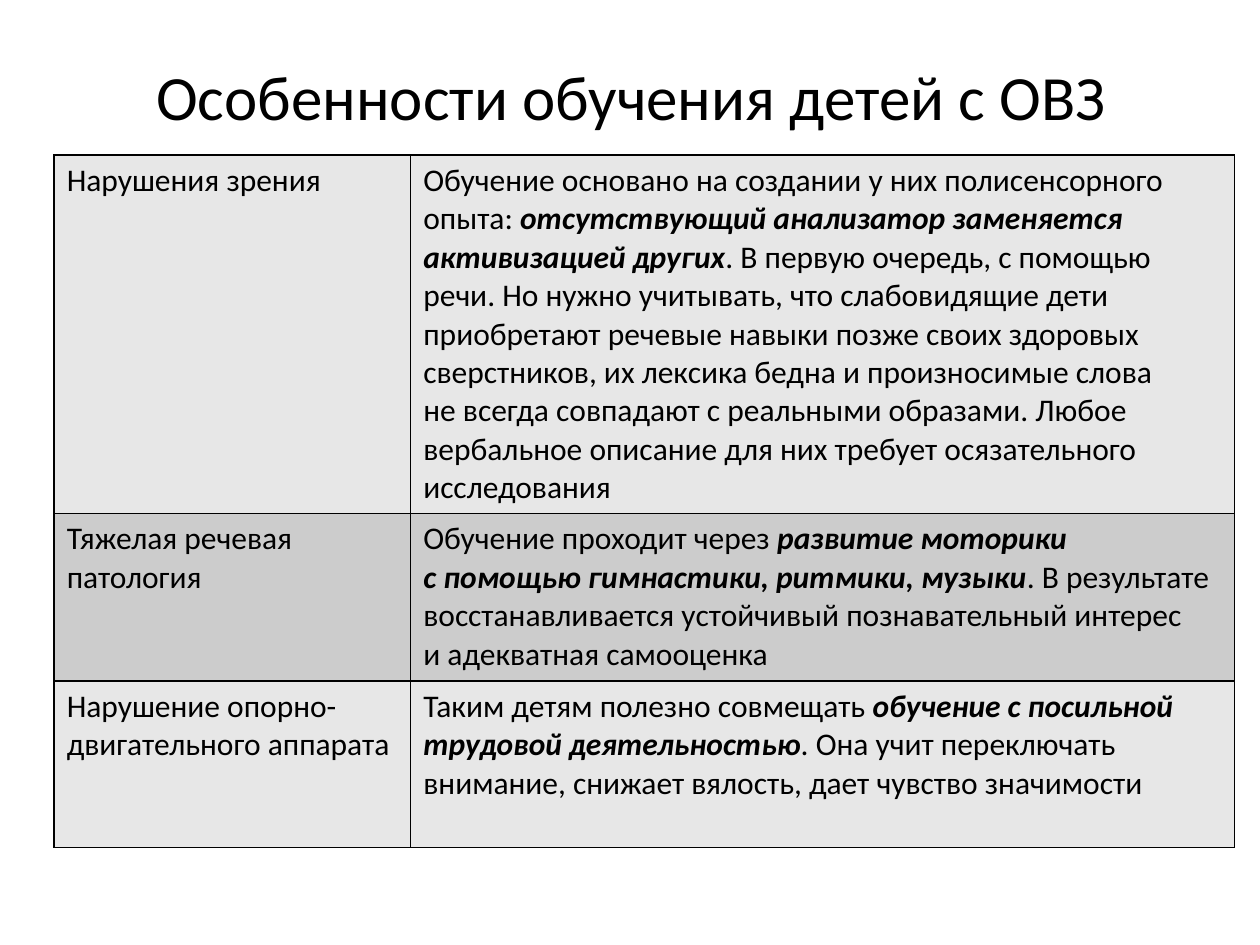
from lxml.etree import SubElement
from pptx import Presentation
from pptx.dml.color import RGBColor
from pptx.enum.text import MSO_ANCHOR, PP_ALIGN
from pptx.oxml.ns import qn
from pptx.util import Inches, Pt

TITLE = "Особенности обучения детей с ОВЗ"
# Each row: topic, then text before the key idea, the key idea, text after it
ROWS = [
    ("Нарушения зрения", (
        "Обучение основано на создании у них полисенсорного опыта: ",
        "отсутствующий анализатор заменяется активизацией других",
        ". В первую очередь, с помощью речи. Но нужно учитывать, что "
        "слабовидящие дети приобретают речевые навыки позже своих здоровых "
        "сверстников, их лексика бедна и произносимые слова не всегда "
        "совпадают с реальными образами. Любое вербальное описание для них "
        "требует осязательного исследования")),
    ("Тяжелая речевая патология", (
        "Обучение проходит через ",
        "развитие моторики с помощью гимнастики, ритмики, музыки",
        ". В результате восстанавливается устойчивый познавательный интерес "
        "и адекватная самооценка")),
    ("Нарушение опорно-двигательного аппарата", (
        "Таким детям полезно совмещать ",
        "обучение с посильной трудовой деятельностью",
        ". Она учит переключать внимание, снижает вялость, дает чувство "
        "значимости")),
]
COLUMN_WIDTHS = (2.83, 6.54)
ROW_HEIGHTS = (2.84, 1.33, 1.32)
BAND_FILLS = ("E7E7E7", "CCCCCC")
BLACK = "000000"
NO_BREAK_SPACE = chr(160)


def color(hex_value):
    return RGBColor.from_string(hex_value)


def bind_short_words(text):
    """Keep one- and two-letter words on the line of the word that follows."""
    return "".join(
        word + (NO_BREAK_SPACE if word.isalpha() and len(word) <= 2 else " ")
        for word in text.split(" "))[:-1]


def add_run(paragraph, text, size, **styles):
    run = paragraph.add_run()
    run.text = text
    run.font.color.rgb = color(BLACK)
    for name, value in {"name": "Calibri", "size": Pt(size), **styles}.items():
        setattr(run.font, name, value)


def format_cell(cell, fill):
    properties = cell._tc.get_or_add_tcPr()
    for side in ("a:lnL", "a:lnR", "a:lnT", "a:lnB"):
        line = SubElement(properties, qn(side), w=str(Pt(1)))
        SubElement(SubElement(line, qn("a:solidFill")), qn("a:srgbClr"), val=BLACK)
    cell.fill.solid()
    cell.fill.fore_color.rgb = color(fill)


def add_title(slide):
    title = slide.shapes.title
    box = {"left": 0.51, "top": 0.13, "width": 9, "height": 1.25}
    for name, value in box.items():
        setattr(title, name, Inches(value))
    title.text_frame.vertical_anchor = MSO_ANCHOR.MIDDLE
    paragraph = title.text_frame.paragraphs[0]
    paragraph.alignment = PP_ALIGN.CENTER
    add_run(paragraph, TITLE, 36)


def add_features_table(slide):
    table = slide.shapes.add_table(
        len(ROWS), len(COLUMN_WIDTHS), Inches(0.43), Inches(1.23),
        Inches(sum(COLUMN_WIDTHS)), Inches(sum(ROW_HEIGHTS))).table
    table.first_row = False
    for column, width in zip(table.columns, COLUMN_WIDTHS):
        column.width = Inches(width)
    for index, (topic, parts) in enumerate(ROWS):
        table.rows[index].height = Inches(ROW_HEIGHTS[index])
        topic_cell, method_cell = table.rows[index].cells
        for cell in (topic_cell, method_cell):
            format_cell(cell, BAND_FILLS[index % 2])
        add_run(topic_cell.text_frame.paragraphs[0], topic, 18, bold=False)
        for part, is_key in zip(parts, (False, True, False)):
            add_run(method_cell.text_frame.paragraphs[0],
                    bind_short_words(part), 18, bold=is_key, italic=is_key)


def main():
    presentation = Presentation()
    presentation.slide_width = Inches(10)
    presentation.slide_height = Inches(7.5)
    slide = presentation.slides.add_slide(presentation.slide_layouts[5])
    add_title(slide)
    add_features_table(slide)
    presentation.save("out.pptx")


if __name__ == "__main__":
    main()
